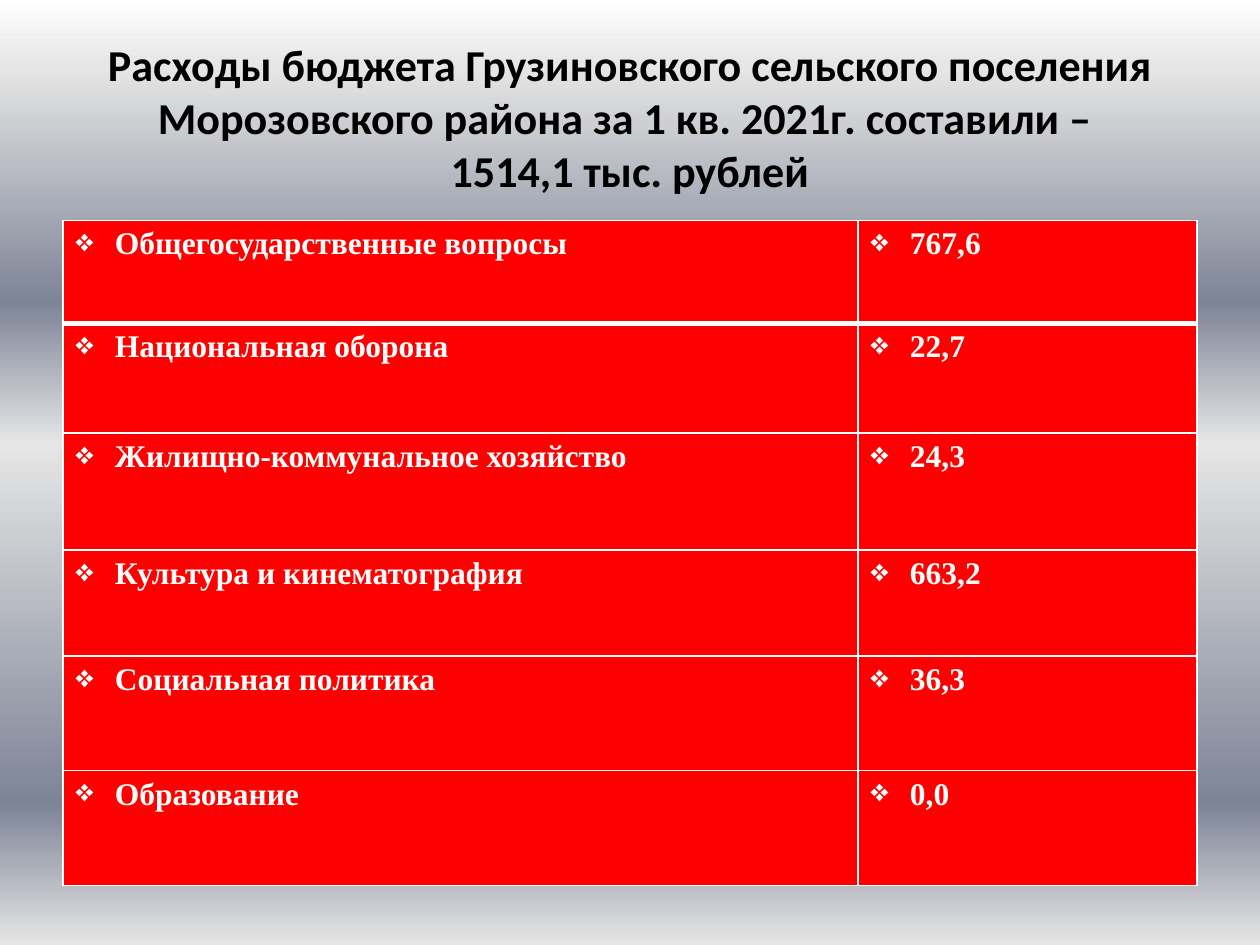
from lxml import etree
from pptx import Presentation
from pptx.dml.color import RGBColor
from pptx.enum import text
from pptx.oxml import ns
from pptx.util import Pt

COLORS = {"title": "000000", "text": "FFFFFF", "border": "FFFFFF",
          "cell": "FF0000", "light": "E6E6E6", "dark": "7D8496", "white": "FFFFFF"}


def add_xml(parent, tag, **attrs):
    return etree.SubElement(parent, ns.qn(tag), {k: str(v) for k, v in attrs.items()})


def write(tf, content, size, font, color, align, bullet=None, indent=0):
    p = tf.paragraphs[0]
    p.text = content
    p.alignment = align
    for r in p.runs:
        r.font.size, r.font.name, r.font.bold = Pt(size), font, True
        r.font.color.rgb = RGBColor.from_string(COLORS[color])
    if bullet:
        pPr = p._p.get_or_add_pPr()
        pPr.set("marL", str(Pt(indent)))
        pPr.set("indent", str(-Pt(indent)))
        add_xml(pPr, "a:buChar", char=bullet)


prs = Presentation()
prs.slide_width, prs.slide_height = Pt(720), Pt(540)
s = prs.slides.add_slide(prs.slide_layouts[5])

# Background: vertical gradient
fill = s.background.fill
fill.gradient()
fill.gradient_angle = 270
stops = s.element.find(".//" + ns.qn("a:gsLst"))
for stop in list(stops):
    stops.remove(stop)
for pos, color in [(0, "white"), (7, "light"), (32, "dark"),
                   (47, "light"), (85, "dark"), (100, "light")]:
    stop = add_xml(stops, "a:gs", pos=pos * 1000)
    add_xml(stop, "a:srgbClr", val=COLORS[color])

# Title
title = s.shapes.title
title.left, title.top, title.width, title.height = Pt(36), Pt(21.6), Pt(648), Pt(90)
tf = title.text_frame
tf.word_wrap = True
tf.auto_size = text.MSO_AUTO_SIZE.NONE
tf.vertical_anchor = text.MSO_ANCHOR.MIDDLE
write(tf, "Расходы бюджета Грузиновского сельского поселения Морозовского района "
          "за 1 кв. 2021г. составили – \v1514,1 тыс. рублей",
      size=25.2, font="Calibri", color="title", align=text.PP_ALIGN.CENTER)

# Expense table
expenses = [
    ("Общегосударственные вопросы", "767,6", 58.8),
    ("Национальная оборона", "22,7", 62.6),
    ("Жилищно-коммунальное хозяйство", "24,3", 67),
    ("Культура и кинематография", "663,2", 60.6),
    ("Социальная политика", "36,3", 65.4),
    ("Образование", "0,0", 65.6),
]
table = s.shapes.add_table(len(expenses), 2, Pt(36), Pt(126), Pt(648), Pt(380)).table
for column, width in zip(table.columns, (454.3, 193.7)):
    column.width = Pt(width)

for i, (*values, height) in enumerate(expenses):
    table.rows[i].height = Pt(height)
    for j, value in enumerate(values):
        cell = table.cell(i, j)
        write(cell.text_frame, value, size=18, font="Times New Roman", color="text",
              align=text.PP_ALIGN.LEFT, bullet="❖", indent=22.5)

        # Borders: a thick rule under the first row, thin elsewhere
        tcPr = cell._tc.get_or_add_tcPr()
        for side in "LRTB":
            thick = (i, side) in [(0, "B"), (1, "T")]
            ln = add_xml(tcPr, f"a:ln{side}", w=Pt(3 if thick else 1))
            add_xml(add_xml(ln, "a:solidFill"), "a:srgbClr", val=COLORS["border"])
        cell.fill.solid()
        cell.fill.fore_color.rgb = RGBColor.from_string(COLORS["cell"])

prs.save("out.pptx")
